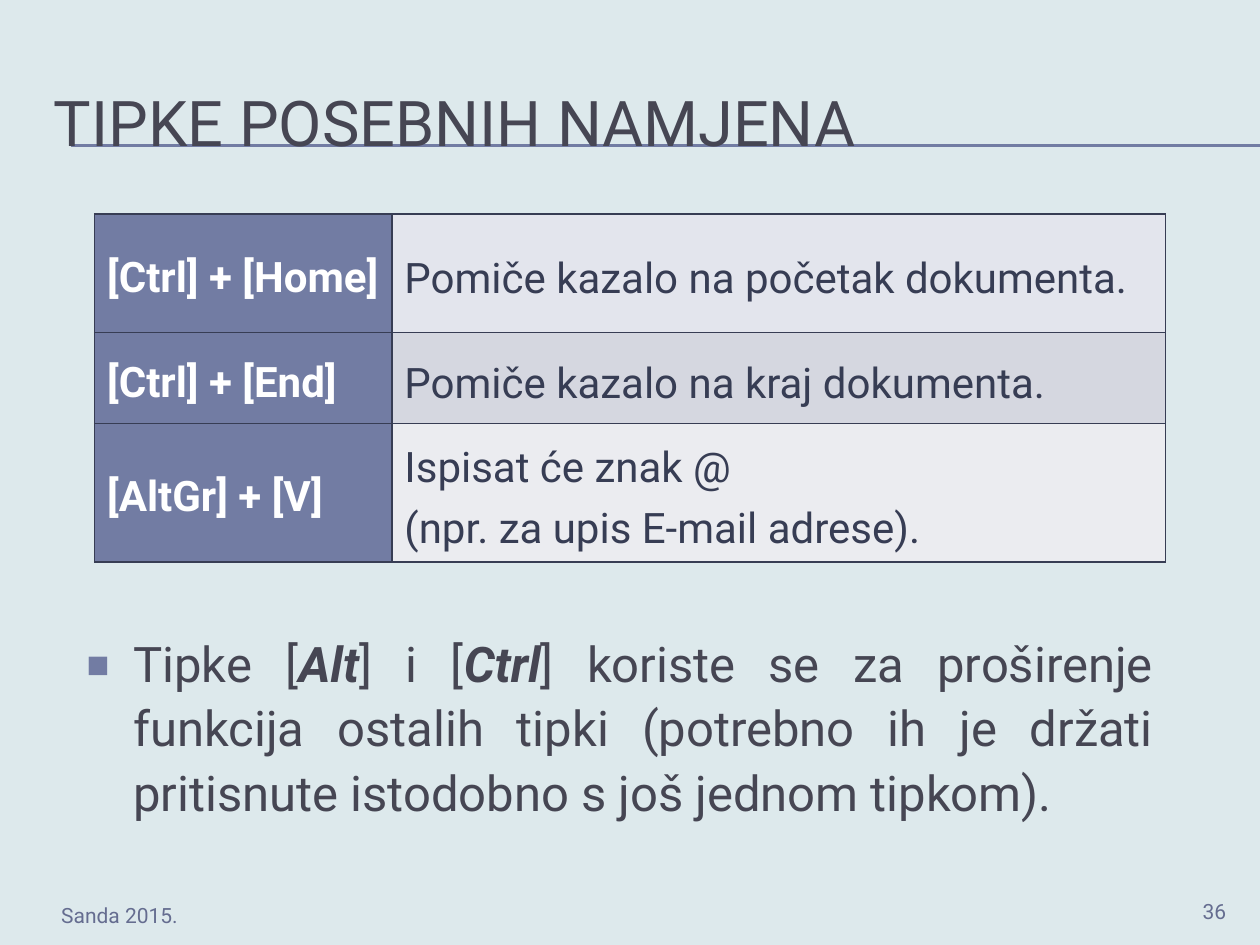
from dataclasses import dataclass

from lxml.etree import SubElement
from pptx import Presentation
from pptx.dml.color import RGBColor
from pptx.enum.shapes import MSO_CONNECTOR
from pptx.enum.text import MSO_ANCHOR, PP_ALIGN
from pptx.oxml import parse_xml
from pptx.oxml.ns import nsdecls, qn
from pptx.util import Inches, Pt


@dataclass(frozen=True)
class Theme:
    font: str = "Roboto"
    back: str = "DDE9EC"
    ink: str = "464653"
    navy: str = "373D54"
    blue: str = "727CA3"
    mute: str = "656D90"
    white: str = "FFFFFF"
    bands: tuple = ("E3E5ED", "D5D7E0", "EBECF0")
    title: int = 36
    body: int = 28
    cell: int = 24
    small: int = 12


class Deck:
    """Draws on one slide, on a grid of 100 columns by 75 rows."""

    def __init__(self, theme):
        self.theme = theme
        self.file = Presentation()
        self.file.slide_width, self.file.slide_height = Inches(10), Inches(7.5)
        self.col = self.file.slide_width / 100
        self.row = self.file.slide_height / 75
        self.slide = self.file.slides.add_slide(self.file.slide_layouts[6])
        self.paint(self.slide.background.fill, theme.back)

    def paint(self, fill, color):
        fill.solid()
        fill.fore_color.rgb = RGBColor.from_string(color)

    def place(self, x, y, w, h):
        return (round(x * self.col), round(y * self.row),
                round(w * self.col), round(h * self.row))

    def style(self, par, size, color, bold=False):
        for run in par.runs:
            font = run.font
            font.name, font.size, font.bold = self.theme.font, Pt(size), bold
            font.color.rgb = RGBColor.from_string(color)

    def text(self, box, words, size, color, align=PP_ALIGN.LEFT,
             anchor=MSO_ANCHOR.TOP):
        frame = self.slide.shapes.add_textbox(*self.place(*box)).text_frame
        frame.word_wrap = True
        frame.vertical_anchor = anchor
        frame.text = words
        par = frame.paragraphs[0]
        par.alignment = align
        self.style(par, size, color)
        return par

    def bullet(self, box, parts):
        """Parts alternate between plain and bold italic."""
        theme = self.theme
        par = self.text(box, "", theme.body, theme.ink, PP_ALIGN.JUSTIFY)
        for part in parts:
            par.add_run().text = part
        self.style(par, theme.body, theme.ink)
        for run in par.runs[1::2]:
            run.font.bold = run.font.italic = True
        par.line_spacing, par.space_before = 1.1, Pt(4)
        props = par._p.get_or_add_pPr()
        props.set("marL", str(Inches(0.38)))
        props.set("indent", str(-Inches(0.38)))
        tint = SubElement(props, qn("a:buClr"))
        SubElement(tint, qn("a:srgbClr"), val=theme.blue)
        SubElement(props, qn("a:buSzPct"), val="130000")
        SubElement(props, qn("a:buFont"), typeface=theme.font)
        SubElement(props, qn("a:buChar"), char="▪")

    def line(self, x, y, end):
        left, top, right, _ = self.place(x, y, end, 0)
        rule = self.slide.shapes.add_connector(
            MSO_CONNECTOR.STRAIGHT, left, top, right, top)
        rule.line.width = Pt(0.75)
        rule.line.color.rgb = RGBColor.from_string(self.theme.blue)
        SubElement(rule._element.spPr, qn("a:effectLst"))

    def cell(self, cell, words, fill, color, space, bold):
        cell.text_frame.text = words
        cell.vertical_anchor = MSO_ANCHOR.MIDDLE
        par = cell.text_frame.paragraphs[0]
        par.line_spacing = space
        self.style(par, self.theme.cell, color, bold)
        props = cell._tc.get_or_add_tcPr()
        for side in ("lnL", "lnR", "lnT", "lnB"):
            props.append(parse_xml(
                f'<a:{side} {nsdecls("a")} w="{Pt(1)}"><a:solidFill>'
                f'<a:srgbClr val="{self.theme.navy}"/></a:solidFill></a:{side}>'))
        self.paint(cell.fill, fill)

    def table(self, x, y, cols, rows, data):
        theme = self.theme
        box = self.place(x, y, sum(cols), sum(rows))
        grid = self.slide.shapes.add_table(len(rows), len(cols), *box).table
        grid.first_row = grid.horz_banding = False
        for col, width in zip(grid.columns, cols):
            col.width = round(width * self.col)
        for row, height, band, (keys, use) in zip(
                grid.rows, rows, theme.bands, data):
            row.height = round(height * self.row)
            self.cell(row.cells[0], keys, theme.blue, theme.white, 1.2, True)
            self.cell(row.cells[1], use, band, theme.navy, 1.25, False)


def main():
    theme = Theme()
    deck = Deck(theme)
    for y in (11.5, 11.6):
        deck.line(5.6, y, 100)
    deck.text((3.3, 5, 95, 9.2), "TIPKE POSEBNIH NAMJENA",
              theme.title, theme.ink, anchor=MSO_ANCHOR.MIDDLE)
    deck.text((0, 71.1, 15.1, 3.9), "Sanda 2015.",
              theme.small, theme.mute, PP_ALIGN.RIGHT)
    deck.text((90, 70.8, 8.3, 2.7), "36",
              theme.small, theme.mute, PP_ALIGN.RIGHT)
    deck.table(7.5, 17, (23.6, 61.4), (9.4, 7.2, 10.8), (
        ("[Ctrl] + [Home]", "Pomiče kazalo na početak dokumenta."),
        ("[Ctrl] + [End]", "Pomiče kazalo na kraj dokumenta."),
        ("[AltGr] + [V]", "Ispisat će znak @ \v(npr. za upis E-mail adrese)."),
    ))
    deck.bullet((5.8, 49.3, 86.7, 16.1), (
        "Tipke [", "Alt", "] i [", "Ctrl",
        "] koriste se za proširenje funkcija ostalih tipki (potrebno ih je "
        "držati pritisnute istodobno s još jednom tipkom)."))
    deck.file.save("out.pptx")


if __name__ == "__main__":
    main()
